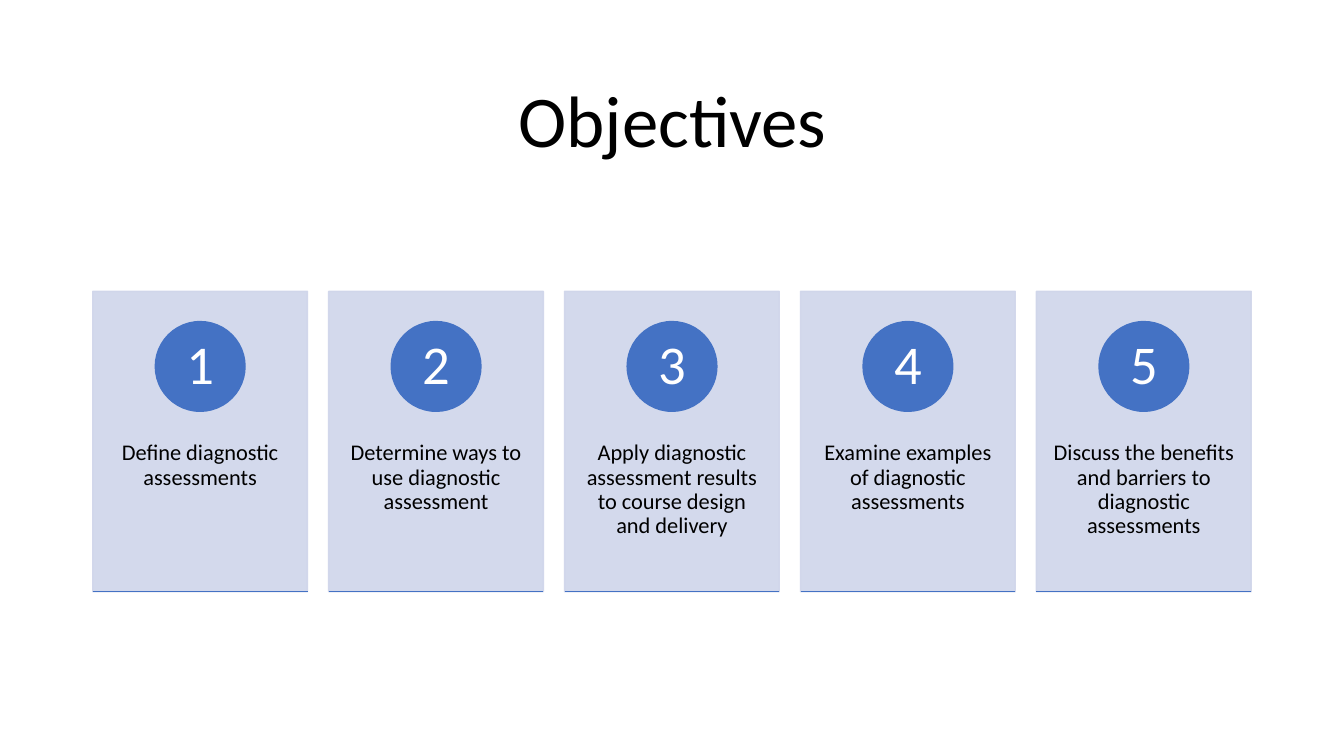
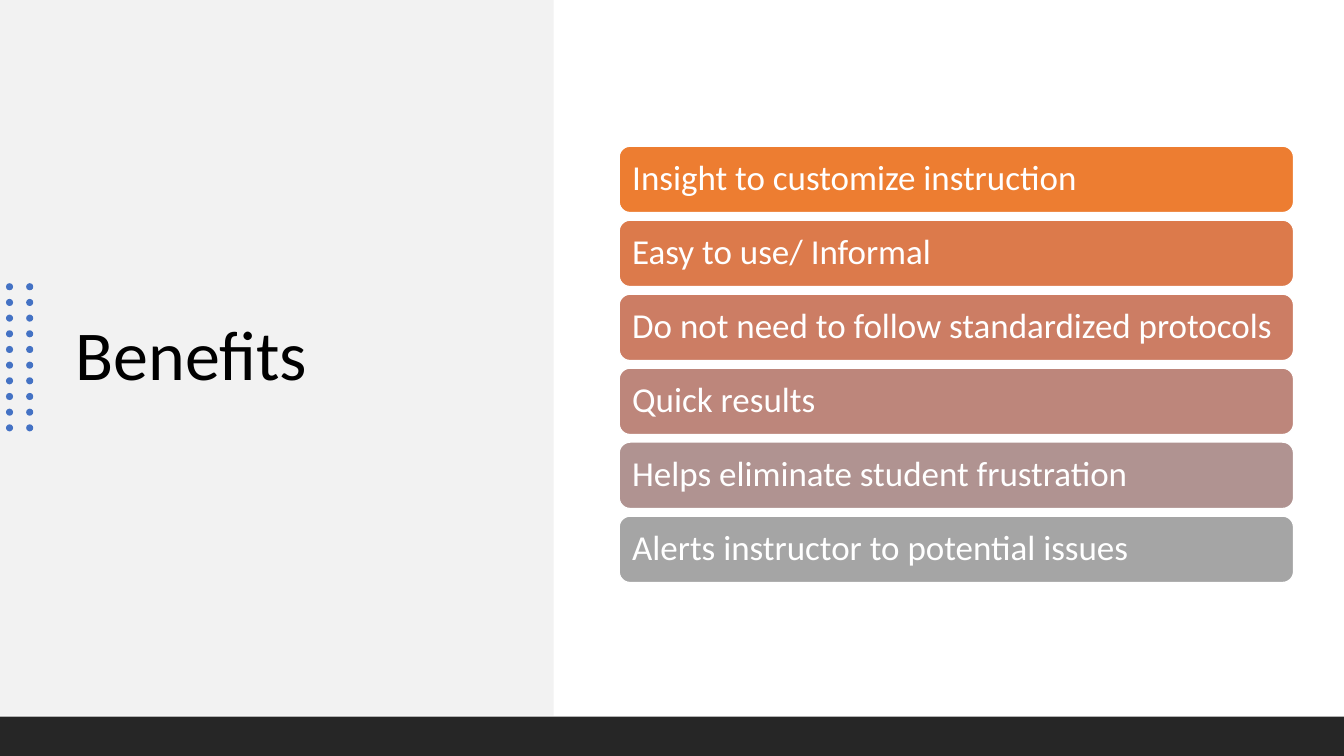
from lxml import etree
from pptx import Presentation
from pptx.dml.color import RGBColor
from pptx.enum.shapes import MSO_CONNECTOR, MSO_SHAPE
from pptx.enum.text import MSO_ANCHOR, PP_ALIGN
from pptx.oxml.ns import qn
from pptx.util import Inches, Pt

RECTANGLE, OVAL, ROUNDED = MSO_SHAPE.RECTANGLE, MSO_SHAPE.OVAL, MSO_SHAPE.ROUNDED_RECTANGLE
STRAIGHT = MSO_CONNECTOR.STRAIGHT
TOP, MIDDLE = MSO_ANCHOR.TOP, MSO_ANCHOR.MIDDLE
LEFT, CENTER = PP_ALIGN.LEFT, PP_ALIGN.CENTER

FONT = "Calibri"
COLORS = {
    "text": "000000",
    "white": "FFFFFF",
    "accent": "4472C4",
    "card": "CFD5EA",
    "panel": "F2F2F2",
    "footer": "262626",
    "bar 1": "ED7D31",
    "bar 2": "DC7A4B",
    "bar 3": "CC7D64",
    "bar 4": "BD867B",
    "bar 5": "B09391",
    "bar 6": "A5A5A5",
}


def write(box, text, size, color="text", align=LEFT, anchor=MIDDLE, margins=(0.1, 0.05, 0.1, 0.05)):
    """Fill a box with one paragraph; margins are left, top, right, bottom in inches."""
    frame = box.text_frame
    frame.word_wrap = True
    frame.vertical_anchor = anchor
    frame.margin_left, frame.margin_top, frame.margin_right, frame.margin_bottom = map(Inches, margins)
    para = frame.paragraphs[0]
    para.alignment = align
    para.line_spacing = 0.9
    span = para.add_run()
    span.text = text
    span.font.name = FONT
    span.font.size = Pt(size)
    span.font.color.rgb = RGBColor.from_string(COLORS[color])


def add_block(page, kind, left, top, width, height, fill, line=None):
    block = page.shapes.add_shape(kind, Inches(left), Inches(top), Inches(width), Inches(height))
    block.shadow.inherit = False
    block.fill.solid()
    block.fill.fore_color.rgb = RGBColor.from_string(COLORS[fill])
    if line:
        block.line.color.rgb = RGBColor.from_string(COLORS[line])
        block.line.width = Pt(1)
    else:
        block.line.fill.background()
    return block


deck = Presentation()
deck.slide_width, deck.slide_height = Inches(13.33), Inches(7.5)
blank = deck.slide_layouts[6]

# Objectives: five numbered cards
page = deck.slides.add_slide(blank)
title = page.shapes.add_textbox(Inches(0.92), Inches(0.61), Inches(11.5), Inches(1.24))
write(title, "Objectives", 52, align=CENTER)

objectives = [
    "Define diagnostic assessments",
    "Determine ways to use diagnostic assessment",
    "Apply diagnostic assessment results to course design and delivery",
    "Examine examples of diagnostic assessments",
    "Discuss the benefits and barriers to diagnostic assessments",
]
card_top, card_width, card_height, card_step = 2.89, 2.13, 2.98, 2.34
circle_size = 0.89
for index, objective in enumerate(objectives):
    left = 0.92 + index * card_step
    card = add_block(page, RECTANGLE, left, card_top, card_width, card_height, "card", "card")
    for color in card._element.spPr.iter(qn("a:srgbClr")):
        etree.SubElement(color, qn("a:alpha"), val="90000")
    write(card, objective, 16, align=CENTER, anchor=TOP, margins=(0.17, 1.49, 0.17, 0.36))

    circle_left = left + (card_width - circle_size) / 2
    circle = add_block(page, OVAL, circle_left, 3.19, circle_size, circle_size, "accent", "accent")
    write(circle, str(index + 1), 39, color="white", align=CENTER, margins=(0.07, 0.01, 0.07, 0.01))

    bottom = Inches(card_top + card_height)
    rule = page.shapes.add_connector(STRAIGHT, Inches(left), bottom, Inches(left + card_width), bottom)
    rule.line.color.rgb = RGBColor.from_string(COLORS["accent"])
    rule.line.width = Pt(1)
    etree.SubElement(rule._element.spPr, qn("a:effectLst"))

# Benefits: title panel and a stack of bars
page = deck.slides.add_slide(blank)
add_block(page, RECTANGLE, 0, 0, 5.49, 7.1, "panel")
title = page.shapes.add_textbox(Inches(0.65), Inches(1.32), Inches(4.24), Inches(4.45))
write(title, "Benefits", 50)

dot_rows = 10
dot_step = 1.4 / (dot_rows - 1)
for row in range(dot_rows):
    for left in (0.06, 0.26):
        add_block(page, OVAL, left, 2.81 + row * dot_step, 0.07, 0.07, "accent")

add_block(page, RECTANGLE, 0, 7.11, 13.33, 0.39, "footer")

benefits = [
    "Insight to customize instruction",
    "Easy to use/ Informal",
    "Do not need to follow standardized protocols",
    "Quick results",
    "Helps eliminate student frustration",
    "Alerts instructor to potential issues",
]
bar_step = 3.67 / (len(benefits) - 1)
for index, benefit in enumerate(benefits):
    bar = add_block(page, ROUNDED, 6.14, 1.45 + index * bar_step, 6.69, 0.66, f"bar {index + 1}", "white")
    write(bar, benefit, 25, color="white", margins=(0.1, 0.1, 0.1, 0.1))

deck.save("out.pptx")
